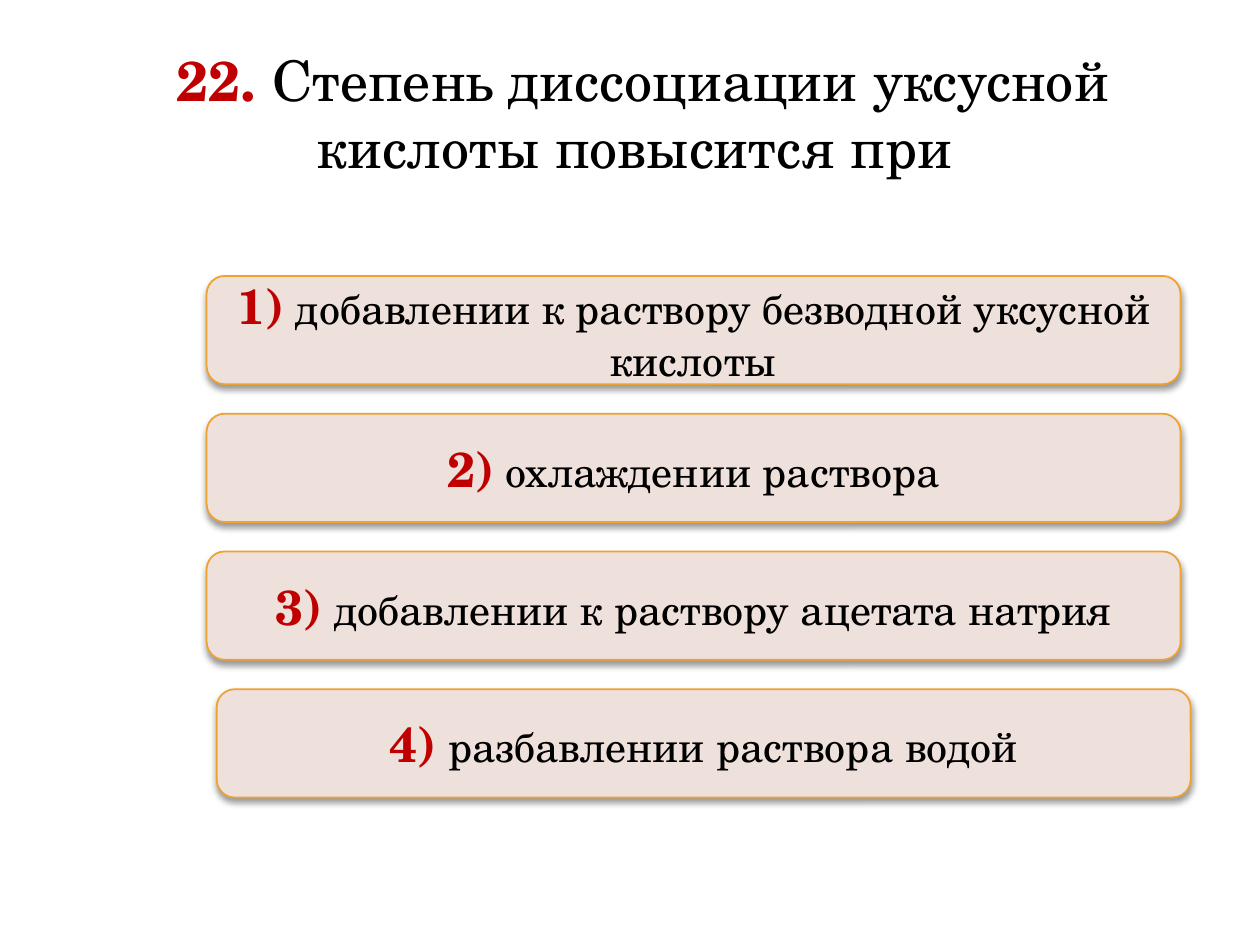
from lxml import etree
from pptx import Presentation
from pptx.dml.color import RGBColor
from pptx.enum.shapes import MSO_SHAPE
from pptx.enum.text import MSO_ANCHOR, MSO_AUTO_SIZE, PP_ALIGN
from pptx.oxml import parse_xml
from pptx.util import Inches, Pt

ROUNDED = MSO_SHAPE.ROUNDED_RECTANGLE
MIDDLE = MSO_ANCHOR.MIDDLE
GROW = MSO_AUTO_SIZE.SHAPE_TO_FIT_TEXT
CENTER = PP_ALIGN.CENTER

FONT = "TeX Gyre Schola"
RED, BLACK = "C00000", "000000"
PANEL, BORDER = "EEE0DB", "F0A22E"
DRAWING_NS = "http://schemas.openxmlformats.org/drawingml/2006/main"

ANSWERS = [
    "добавлении к раствору безводной уксусной кислоты",
    "охлаждении раствора",
    "добавлении к раствору ацетата натрия",
    "разбавлении раствора водой",
]


def color(hex_string):
    return RGBColor.from_string(hex_string)


def write_numbered(paragraph, number, number_size, text, text_size):
    """Bold red number followed by plain black text, centred."""
    paragraph.alignment = CENTER
    for content, size, hex_string, bold in (
        (number, number_size, RED, True),
        (" " + text, text_size, BLACK, False),
    ):
        run = paragraph.add_run()
        run.text = content
        run.font.name = FONT
        run.font.size = Pt(size)
        run.font.bold = bold
        run.font.color.rgb = color(hex_string)


def add_soft_shadow(shape):
    """Black shadow, 40 % opaque, falling 2 pt straight down."""
    shape.shadow.inherit = False
    effects = shape._element.spPr.find(f"{{{DRAWING_NS}}}effectLst")
    shadow = parse_xml(
        f'<a:outerShdw xmlns:a="{DRAWING_NS}" blurRad="{Pt(4)}" dist="{Pt(2)}" '
        'dir="5400000" rotWithShape="0"/>'
    )
    shade = etree.SubElement(shadow, f"{{{DRAWING_NS}}}srgbClr", val=BLACK)
    etree.SubElement(shade, f"{{{DRAWING_NS}}}alpha", val="40000")
    effects.append(shadow)


def add_question(slide, left, top, width, height):
    box = slide.shapes.add_textbox(left, top, width, height)
    frame = box.text_frame
    frame.word_wrap = True
    frame.auto_size = GROW
    paragraph = frame.paragraphs[0]
    write_numbered(paragraph, "22.", 32,
                   "Степень диссоциации уксусной кислоты повысится при ", 32)
    paragraph.add_line_break()
    paragraph.font.size = Pt(32)


def add_answer(slide, number, text, left, top, width, height):
    shape = slide.shapes.add_shape(ROUNDED, left, top, width, height)
    shape.fill.solid()
    shape.fill.fore_color.rgb = color(PANEL)
    shape.line.color.rgb = color(BORDER)
    shape.line.width = Pt(1)
    add_soft_shadow(shape)
    frame = shape.text_frame
    frame.word_wrap = True
    frame.vertical_anchor = MIDDLE
    write_numbered(frame.paragraphs[0], f"{number})", 28, text, 24)


def add_answers(slide, left, top, width, height):
    """Stack the answers at an equal pitch; the last sits a little to the right."""
    answer_height = Inches(0.86)
    pitch = (height - answer_height) / (len(ANSWERS) - 1)
    for index, text in enumerate(ANSWERS):
        shift = Inches(0.08) if index == len(ANSWERS) - 1 else 0
        add_answer(slide, index + 1, text, left + shift,
                   round(top + index * pitch), width, answer_height)


def main():
    presentation = Presentation()
    presentation.slide_width = Inches(10)
    presentation.slide_height = Inches(7.5)
    slide = presentation.slides.add_slide(presentation.slide_layouts[6])

    # Question
    add_question(slide, Inches(1.09), Inches(0.31), Inches(8.03), Inches(1.72))
    # Answer options
    add_answers(slide, Inches(1.64), Inches(2.19), Inches(7.73), Inches(4.14))

    presentation.save("out.pptx")


if __name__ == "__main__":
    main()
